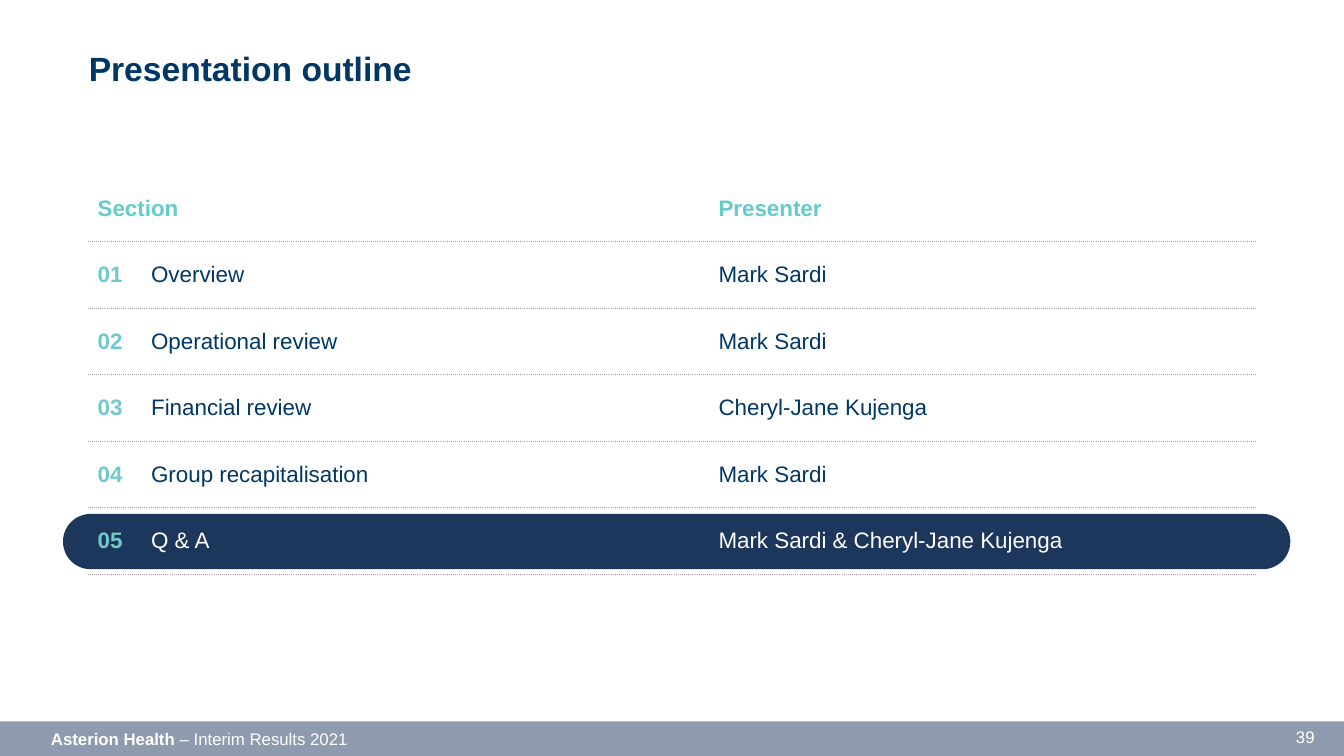
from lxml import etree
from pptx import Presentation
from pptx.dml.color import RGBColor
from pptx.enum.shapes import MSO_SHAPE
from pptx.enum.text import MSO_ANCHOR, PP_ALIGN
from pptx.oxml.ns import qn
from pptx.util import Pt

RECT = MSO_SHAPE.RECTANGLE
PILL = MSO_SHAPE.ROUNDED_RECTANGLE
MIDDLE, BOTTOM = MSO_ANCHOR.MIDDLE, MSO_ANCHOR.BOTTOM
LEFT, RIGHT = PP_ALIGN.LEFT, PP_ALIGN.RIGHT

FONT = "Arial"
COLORS = {
    "navy": "003764",
    "pill": "1D365C",
    "footer": "8E9AAD",
    "header": "65CBC9",
    "number": "70CACB",
    "rule": "A5A5A5",
    "white": "FFFFFF",
}
SECTIONS = [
    ("01", "Overview", "Mark Sardi"),
    ("02", "Operational review", "Mark Sardi"),
    ("03", "Financial review", "Cheryl-Jane Kujenga"),
    ("04", "Group recapitalisation", "Mark Sardi"),
    ("05", "Q & A", "Mark Sardi & Cheryl-Jane Kujenga"),
]
CURRENT = "05"
COLUMNS = (38.2, 405.3, 391.7)
ROW_HEIGHT = 46.15


class Deck:
    def __init__(self, prs):
        self.slide = prs.slides.add_slide(prs.slide_layouts[5])

    def color(self, name):
        return RGBColor.from_string(COLORS[name])

    def style(self, p, size, color, bold=False):
        p.font.name = FONT
        p.font.size = Pt(size)
        p.font.bold = bold
        p.font.color.rgb = self.color(color)

    def title(self, text, *box):
        sp = self.slide.shapes.title
        sp.left, sp.top, sp.width, sp.height = map(Pt, box)
        tf = sp.text_frame
        tf.margin_left = tf.margin_top = tf.margin_right = tf.margin_bottom = 0
        tf.vertical_anchor = BOTTOM
        tf.text = text
        p = tf.paragraphs[0]
        p.alignment = LEFT
        self.style(p, 24, "navy", True)

    def shape(self, kind, color, *box):
        sp = self.slide.shapes.add_shape(kind, *map(Pt, box))
        sp.shadow.inherit = False
        sp.fill.solid()
        sp.fill.fore_color.rgb = self.color(color)
        sp.line.fill.background()
        return sp

    def text(self, runs, align, *box):
        tf = self.slide.shapes.add_textbox(*map(Pt, box)).text_frame
        tf.word_wrap = True
        p = tf.paragraphs[0]
        p.alignment = align
        self.style(p, 12, "white")
        for text, bold in runs:
            r = p.add_run()
            r.text = text
            r.font.bold = bold

    def borders(self, cell, dotted):
        tcPr = cell._tc.get_or_add_tcPr()
        for i, side in enumerate(("lnL", "lnR", "lnT", "lnB")):
            ln = etree.Element(qn(f"a:{side}"), w=str(Pt(0.75)))
            if side in dotted:
                fill = etree.SubElement(ln, qn("a:solidFill"))
                etree.SubElement(fill, qn("a:srgbClr"), val=COLORS["rule"])
                etree.SubElement(ln, qn("a:prstDash"), val="sysDot")
            else:
                etree.SubElement(ln, qn("a:noFill"))
            tcPr.insert(i, ln)

    def cell(self, cell, text, color, bold):
        cell.margin_top = cell.margin_bottom = Pt(14.15)
        cell.vertical_anchor = MIDDLE
        cell.text = text
        p = cell.text_frame.paragraphs[0]
        p.space_after = Pt(3)
        self.style(p, 16, color, bold)

    def table(self, header, rows, left, top):
        count = len(rows) + 1
        box = left, top, sum(COLUMNS), count * ROW_HEIGHT
        frame = self.slide.shapes.add_table(count, len(COLUMNS), *map(Pt, box))
        table = frame.table
        table.first_row = table.horz_banding = False
        for column, width in zip(table.columns, COLUMNS):
            column.width = Pt(width)
        for i, values in enumerate([header, *rows]):
            table.rows[i].height = Pt(ROW_HEIGHT)
            body = "white" if values[0] == CURRENT else "navy"
            for j, value in enumerate(values):
                cell = table.cell(i, j)
                cell.fill.background()
                self.borders(cell, ("lnT", "lnB") if i else ("lnB",))
                color = "header" if i == 0 else "number" if j == 0 else body
                self.cell(cell, value, color, i == 0 or j == 0)
        table.cell(0, 0).merge(table.cell(0, 1))


def main():
    prs = Presentation()
    prs.slide_width, prs.slide_height = Pt(960), Pt(540)
    deck = Deck(prs)
    deck.shape(RECT, "footer", 0, 515.3, 960, 24.7)
    deck.text([("39", False)], RIGHT, 684.7, 515.3, 261.4, 21.8)
    footer = [("Asterion Health", True), (" – Interim Results 2021", False)]
    deck.text(footer, LEFT, 29.3, 516.8, 426.2, 21.8)
    pill = deck.shape(PILL, "pill", 45, 367.1, 876.7, 39.5)
    pill.adjustments[0] = 0.5
    deck.title("Presentation outline", 63.4, 29.5, 835.2, 33.8)
    deck.table(("Section", "", "Presenter"), SECTIONS, 62.6, 125.2)
    prs.save("out.pptx")


if __name__ == "__main__":
    main()
